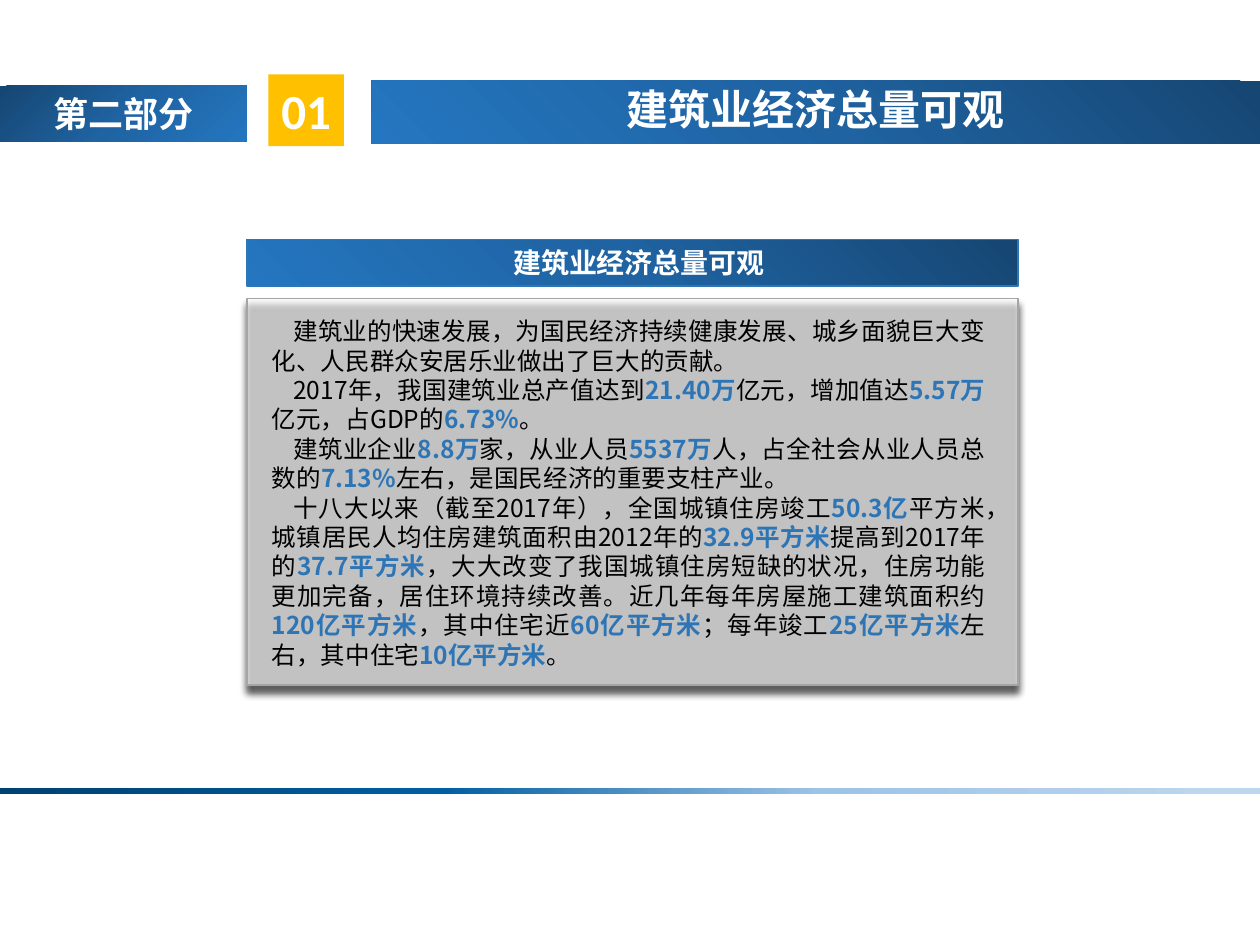
import pptx
import pptx.util
import pptx.dml.color
import pptx.enum.shapes
import pptx.enum.text
import pptx.oxml
from lxml import etree

Inches, Pt = pptx.util.Inches, pptx.util.Pt
RGBColor = pptx.dml.color.RGBColor
ALIGN = pptx.enum.text.PP_ALIGN
ANCHOR = pptx.enum.text.MSO_ANCHOR
RECTANGLE = pptx.enum.shapes.MSO_SHAPE.RECTANGLE

WHITE = RGBColor(0xFF, 0xFF, 0xFF)
BLACK = RGBColor(0, 0, 0)
AMBER = RGBColor(0xFF, 0xC0, 0x00)
BLUE = RGBColor(0x2E, 0x75, 0xB6)
GREY = RGBColor(0xA5, 0xA5, 0xA5)
BAR_STOPS = [(0, RGBColor(0x16, 0x46, 0x72)), (50, RGBColor(0x1F, 0x63, 0xA2)),
             (100, RGBColor(0x24, 0x76, 0xC0))]
RULE_STOPS = [(0, RGBColor(0x00, 0x42, 0x72)), (35, RGBColor(0x00, 0x5E, 0xA2)),
              (65, RGBColor(0x9D, 0xC3, 0xE6)), (98, RGBColor(0xBD, 0xD7, 0xEE))]
CJK_FONT = "Noto Sans CJK SC"
DRAWING_NS = "http://schemas.openxmlformats.org/drawingml/2006/main"

SECTION, NUMBER, TITLE = "第二部分", "01", "建筑业经济总量可观"
# Key figures stand between asterisks.
FACTS = [
    "建筑业的快速发展，为国民经济持续健康发展、城乡面貌巨大变化、人民群众安居乐业做出了巨大的贡献。",
    "2017年，我国建筑业总产值达到*21.40万*亿元，增加值达*5.57万*亿元，占GDP的*6.73%*。",
    "建筑业企业*8.8万*家，从业人员*5537万*人，占全社会从业人员总数的*7.13%*左右，是国民经济的重要支柱产业。",
    "十八大以来（截至2017年），全国城镇住房竣工*50.3亿*平方米，城镇居民人均住房建筑面积由2012年的"
    "*32.9平方米*提高到2017年的*37.7平方米*，大大改变了我国城镇住房短缺的状况，住房功能更加完备，"
    "居住环境持续改善。近几年每年房屋施工建筑面积约*120亿平方米*，其中住宅近*60亿平方米*；"
    "每年竣工*25亿平方米*左右，其中住宅*10亿平方米*。",
]

PANEL_LEFT, PANEL_WIDTH = 1.96, 6.12
TITLE_LEFT, TITLE_WIDTH = 2.95, 7.05


def drawing_xml(xml):
    return pptx.oxml.parse_xml(xml.replace(">", f' xmlns:a="{DRAWING_NS}">', 1))


def add_bar(slide, box, fill=None, line=None, line_width=0.75):
    bar = slide.shapes.add_shape(RECTANGLE, *map(Inches, box))
    bar.shadow.inherit = False
    if fill is not None:
        bar.fill.solid()
        bar.fill.fore_color.rgb = fill
    if line is None:
        bar.line.fill.background()
    else:
        bar.line.color.rgb = line
        bar.line.width = Pt(line_width)
    return bar


def set_gradient(bar, stops, angle):
    """Fill with the stops (percent, colour), the angle running clockwise."""
    bar.fill.background()
    marks = "".join(f'<a:gs pos="{at * 1000}"><a:srgbClr val="{colour}"/></a:gs>'
                    for at, colour in stops)
    gradient = drawing_xml(f'<a:gradFill rotWithShape="1"><a:gsLst>{marks}</a:gsLst>'
                           f'<a:lin ang="{angle * 60000}" scaled="0"/></a:gradFill>')
    properties = bar._element.spPr
    blank = properties.find(f"{{{DRAWING_NS}}}noFill")
    properties.replace(blank, gradient)


def write(shape, paragraphs, size, color=WHITE, bold=True, font=CJK_FONT,
          align=ALIGN.CENTER, anchor=ANCHOR.MIDDLE, indent=0, left_inset=0.1):
    frame = shape.text_frame
    frame.word_wrap = True
    frame.vertical_anchor = anchor
    frame.margin_left = Inches(left_inset)
    for i, text in enumerate(paragraphs):
        paragraph = frame.add_paragraph() if i else frame.paragraphs[0]
        paragraph.alignment = align
        if indent:
            paragraph._p.get_or_add_pPr().set("indent", str(Inches(indent)))
        for j, part in enumerate(text.split("*")):
            key_figure = j % 2 == 1
            run = paragraph.add_run()
            run.text = part
            run.font.size = Pt(size)
            run.font.name = font
            run.font.bold = bold or key_figure
            run.font.color.rgb = BLUE if key_figure else color
            east_asian = drawing_xml(f'<a:ea typeface="{CJK_FONT}"/>'.replace("/>", "></a:ea>"))
            run._r.rPr.find(f"{{{DRAWING_NS}}}latin").addnext(east_asian)


def add_text(slide, box, paragraphs, size, **text_format):
    write(slide.shapes.add_textbox(*map(Inches, box)), paragraphs, size,
          anchor=ANCHOR.TOP, **text_format)


def main():
    deck = pptx.Presentation()
    deck.slide_width, deck.slide_height = Inches(10), Inches(7.5)
    slide = deck.slides.add_slide(deck.slide_layouts[6])

    number_chip = add_bar(slide, (2.13, 0.59, 0.6, 0.57), fill=AMBER)
    write(number_chip, [NUMBER], 28, font="Calibri")

    title_bar = add_bar(slide, (TITLE_LEFT, 0.64, TITLE_WIDTH, 0.5))
    set_gradient(title_bar, BAR_STOPS, 135)
    add_text(slide, (TITLE_LEFT, 0.61, TITLE_WIDTH, 0.5), [TITLE], 24)

    section_bar = add_bar(slide, (0, 0.68, 1.96, 0.44))
    set_gradient(section_bar, BAR_STOPS, 45)
    write(section_bar, [SECTION], 20, font="Calibri")

    footer_rule = add_bar(slide, (0, 6.25, 10, 0.05))
    set_gradient(footer_rule, RULE_STOPS, 0)

    panel = add_bar(slide, (PANEL_LEFT, 2.37, PANEL_WIDTH, 3.07), fill=WHITE,
                    line=GREY, line_width=1)
    panel_properties = panel._element.spPr
    white = panel_properties.find(f"{{{DRAWING_NS}}}solidFill")[0]
    etree.SubElement(white, f"{{{DRAWING_NS}}}alpha", val="62000")
    panel_properties.find(f"{{{DRAWING_NS}}}effectLst").append(drawing_xml(
        f'<a:outerShdw blurRad="{Pt(4)}" dist="{Pt(4)}" dir="5400000" algn="t" '
        'rotWithShape="0"><a:srgbClr val="000000"><a:alpha val="62000"/></a:srgbClr>'
        '</a:outerShdw>'))
    add_text(slide, (2.06, 2.46, 5.86, 2.9), FACTS, 14, color=BLACK, bold=False,
             align=ALIGN.JUSTIFY, indent=0.17)

    heading_bar = add_bar(slide, (PANEL_LEFT, 1.9, PANEL_WIDTH, 0.37), line=BLUE)
    set_gradient(heading_bar, BAR_STOPS, 135)
    write(heading_bar, [TITLE], 16, left_inset=0.2)

    deck.save("out.pptx")


if __name__ == "__main__":
    main()
